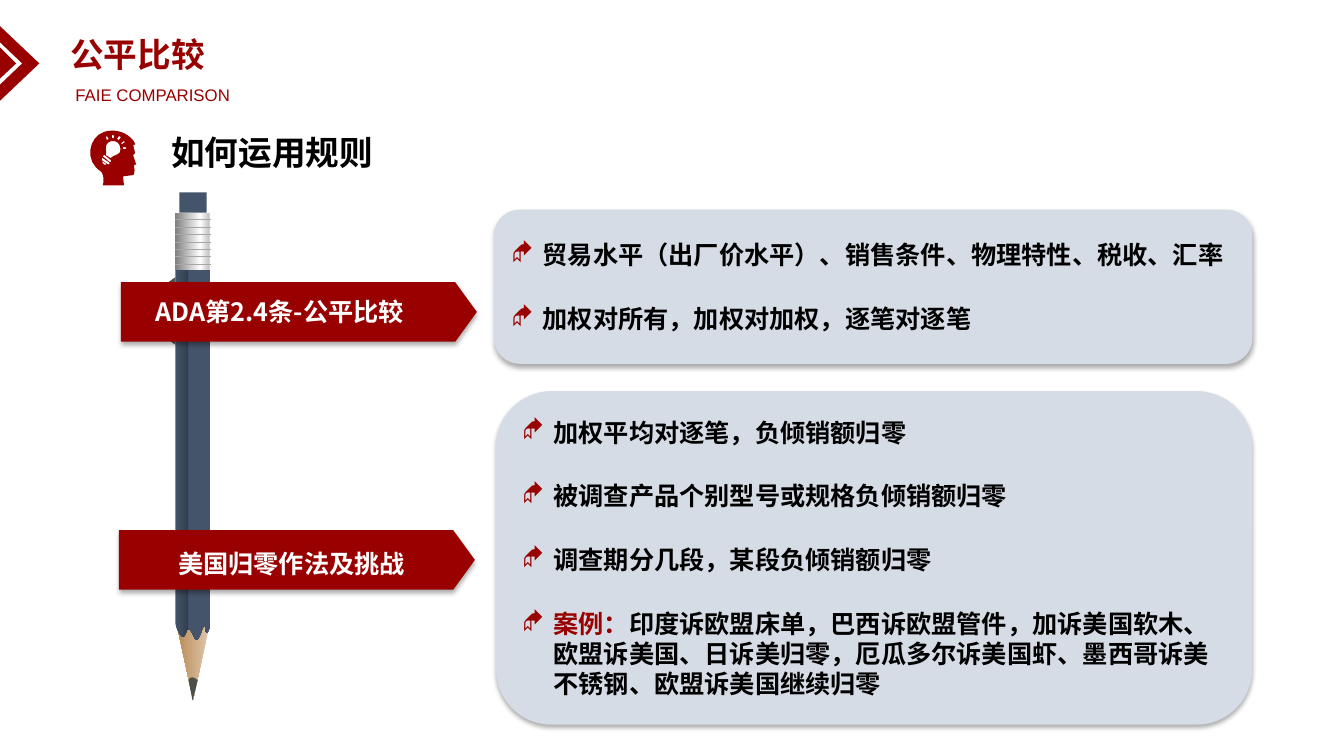
from dataclasses import dataclass

from lxml import etree
from pptx import Presentation
from pptx.dml.color import RGBColor
from pptx.enum import shapes, text
from pptx.oxml import ns
from pptx.util import Pt

PX = 9144  # 100 px to the inch


@dataclass(frozen=True)
class Theme:
    red: str = "990000"
    panel: str = "D6DCE5"
    slate: str = "44546A"
    shade: str = "333F50"
    fold: str = "525252"
    lead: str = "4C504C"
    ring: str = "A6A6A6"
    black: str = "000000"
    white: str = "FFFFFF"
    wood: tuple = ((0, "E1C9AF"), (100, "B88954"))
    metal: tuple = ((0, "BFBFBF"), (27, "FFFFFF"), (100, "808080"))
    cjk: str = "Noto Sans CJK SC"
    latin: str = "Arial"
    title_font: str = "Calibri"
    title: int = 24
    body: int = 18
    caption: int = 12


T = Theme()
MSO = shapes.MSO_SHAPE
HEAD = [
    [(102, 160), (101, 161, 102, 162, 103, 163), (104, 164, 105, 163, 106, 163)],
    [(116, 141), (112, 139, 108, 140, 106, 143), (104, 147, 106, 150, 105, 154),
     (110, 157), (112, 154, 117, 154, 119, 151), (120, 147, 119, 143, 116, 141)],
    [(110, 159), (104, 154), (103, 154, 103, 154, 102, 155),
     (102, 155, 102, 156, 103, 156), (109, 161), (109, 161, 110, 161, 110, 160)],
    [(118, 139), (120, 136), (118, 135), (116, 138)],
    [(121, 143), (124, 141), (123, 140), (120, 142)],
    [(113, 137), (113, 134), (111, 134), (111, 137)],
    [(108, 138), (106, 135), (105, 136), (106, 139)],
    [(122, 148), (125, 148), (125, 146), (122, 146)],
    [(108, 161), (102, 157), (102, 156, 101, 157, 101, 157),
     (101, 158, 101, 158, 101, 159), (107, 163), (108, 163, 108, 163, 108, 163),
     (109, 162, 109, 162, 108, 161)],
    [(102, 184), (103, 180, 103, 175, 101, 171), (83, 160, 88, 136, 103, 131),
     (112, 128, 123, 130, 130, 137), (136, 143, 133, 144, 133, 144), (132, 144),
     (133, 147, 134, 152, 134, 152), (133, 153, 132, 154, 132, 154), (135, 163),
     (133, 164), (133, 167, 134, 169, 133, 172), (133, 173, 132, 174, 130, 174),
     (122, 175), (123, 184)],
]
BARREL = [[(174, 268), (209, 268), (209, 616), (208, 623, 207, 626, 205, 628),
           (203, 625, 204, 619, 202, 621), (201, 622, 198, 634, 195, 635),
           (193, 635, 190, 624, 187, 624), (185, 623, 184, 633, 181, 632),
           (178, 630, 175, 624, 174, 619)]]
LEAD = [[(191, 672), (194, 673, 195, 674, 196, 675), (191, 695), (187, 675),
         (187, 674, 189, 672, 191, 672)]]
CHEVRONS = [[[(0, 47), (16, 63), (0, 78)]],
            [[(0, 26), (39, 63), (0, 100), (0, 84), (22, 63), (0, 42)]]]
RULES = ["贸易水平（出厂价水平）、销售条件、物理特性、税收、汇率",
         "加权对所有，加权对加权，逐笔对逐笔"]
ZEROING = ["加权平均对逐笔，负倾销额归零",
           "被调查产品个别型号或规格负倾销额归零",
           "调查期分几段，某段负倾销额归零",
           ("案例：", "印度诉欧盟床单，巴西诉欧盟管件，加诉美国软木、欧盟诉美国、日诉美归零，"
            "厄瓜多尔诉美国虾、墨西哥诉美不锈钢、欧盟诉美国继续归零")]


def child(parent, tag, **attrs):
    return etree.SubElement(parent, ns.qn(tag), {k: str(v) for k, v in attrs.items()})


def paint(sp, fill, angle=0):
    """Fill with one colour, or with a gradient given as (percent, colour) stops."""
    sp.shadow.inherit = False
    sp.line.fill.background()
    if isinstance(fill, str):
        sp.fill.solid()
        sp.fill.fore_color.rgb = RGBColor.from_string(fill)
        return
    sp.fill.gradient()
    grad = sp._element.spPr.find(ns.qn("a:gradFill"))
    grad.find(ns.qn("a:lin")).set("ang", str(angle * 60000))
    stops = grad.find(ns.qn("a:gsLst"))
    for stop in list(stops):
        stops.remove(stop)
    for percent, colour in fill:
        child(child(stops, "a:gs", pos=percent * 1000), "a:srgbClr", val=colour)


def cast_shadow(sp):
    effects = sp._element.spPr.find(ns.qn("a:effectLst"))
    outer = child(effects, "a:outerShdw", blurRad=Pt(3.5), dist=Pt(2.2),
                  dir=90 * 60000, algn="t", rotWithShape=0)
    child(child(outer, "a:srgbClr", val=T.black), "a:alpha", val=32000)


def preset(slide, kind, box, fill, angle=0, adj=None, rot=0):
    sp = slide.shapes.add_shape(kind, *(v * PX for v in box))
    if adj is not None:
        sp.adjustments[0] = adj
    sp.rotation = rot
    paint(sp, fill, angle)
    return sp


def flatten(contour, steps=8):
    """Turn points and (control, control, end) Bezier segments into EMU points."""
    points = [contour[0]]
    for seg in contour[1:]:
        if len(seg) == 2:
            points.append(seg)
            continue
        knots = [points[-1], seg[:2], seg[2:4], seg[4:]]
        for i in range(1, steps + 1):
            t = i / steps
            weights = ((1 - t) ** 3, 3 * t * (1 - t) ** 2, 3 * t * t * (1 - t), t ** 3)
            points.append(tuple(sum(w * k[axis] for w, k in zip(weights, knots))
                                for axis in (0, 1)))
    return [(round(x * PX), round(y * PX)) for x, y in points]


def outline(slide, contours, fill):
    first, *rest = [flatten(c) for c in contours]
    builder = slide.shapes.build_freeform(*first[0])
    builder.add_line_segments(first[1:], close=True)
    for points in rest:
        builder.move_to(*points[0])
        builder.add_line_segments(points[1:], close=True)
    paint(builder.convert_to_shape(), fill)


def style(r, size, colour, bold=True, font=T.cjk):
    r.font.size, r.font.bold, r.font.name = Pt(size), bold, font
    r.font.color.rgb = RGBColor.from_string(colour)
    child(r._r.get_or_add_rPr(), "a:ea", typeface=T.cjk)


def write(sp, words, size, colour, spacing=1.0, centred=False, **look):
    p = sp.text_frame.paragraphs[0]
    p.text = words
    p.line_spacing = spacing
    p.alignment = text.PP_ALIGN.CENTER if centred else text.PP_ALIGN.LEFT
    style(p.runs[0], size, colour, **look)
    return p


def label(slide, box, *args, wrap=True, **look):
    sp = slide.shapes.add_textbox(*(v * PX for v in box))
    sp.text_frame.word_wrap = wrap
    return write(sp, *args, **look)


def panel(slide, box, items):
    """Rounded panel of bullets; an item in two parts has a red lead-in."""
    sp = preset(slide, MSO.ROUNDED_RECTANGLE, box, T.panel)
    cast_shadow(sp)
    tf = sp.text_frame
    tf.vertical_anchor = text.MSO_ANCHOR.MIDDLE
    for i, item in enumerate(items):
        p = tf.add_paragraph() if i else tf.paragraphs[0]
        p.alignment = text.PP_ALIGN.LEFT
        p.space_before = p.space_after = Pt(12)
        pPr = p._p.get_or_add_pPr()
        pPr.set("marL", str(31 * PX))
        pPr.set("indent", str(-31 * PX))
        child(child(pPr, "a:buClr"), "a:srgbClr", val=T.red)
        child(pPr, "a:buFont", typeface="Wingdings")
        child(pPr, "a:buChar", char="◆")
        parts = [(item, T.black)] if isinstance(item, str) else zip(item, (T.red, T.black))
        for words, colour in parts:
            r = p.add_run()
            r.text = words
            style(r, T.body, colour)


def flag(slide, left, top):
    sp = preset(slide, MSO.PENTAGON, (left, top, 353, 59), T.red, adj=0.363)
    cast_shadow(sp)
    sp.text_frame.vertical_anchor = text.MSO_ANCHOR.MIDDLE
    return sp


def pencil(slide):
    preset(slide, MSO.PENTAGON, (152, 638, 79, 34), T.wood, angle=90, adj=2.32, rot=90)
    outline(slide, BARREL, ((0, T.slate), (34, T.shade), (38, T.slate), (100, T.slate)))
    preset(slide, MSO.RECTANGLE, (174, 211, 34, 57), T.metal, angle=180)
    preset(slide, MSO.RECTANGLE, (178, 191, 27, 20), T.slate)
    outline(slide, LEAD, T.lead)
    for i in range(7):
        y = round((218 + i * 22 / 3) * PX)
        ring = slide.shapes.add_connector(shapes.MSO_CONNECTOR.STRAIGHT,
                                          174 * PX, y, 209 * PX, y)
        ring.line.color.rgb = RGBColor.from_string(T.ring)
        ring.line.width = Pt(0.5)
        child(ring._element.spPr, "a:effectLst")


def main():
    prs = Presentation()
    prs.slide_width, prs.slide_height = 1333 * PX, 750 * PX
    slide = prs.slides.add_slide(prs.slide_layouts[6])

    for chevron in CHEVRONS:
        outline(slide, chevron, T.red)
    label(slide, (60, 33, 390, 48), "公平比较", T.title, T.red,
          spacing=0.9, font=T.title_font)
    label(slide, (65, 81, 180, 28), "FAIE COMPARISON", T.caption, T.red, wrap=False,
          spacing=0.9, bold=False, font=T.latin).space_before = Pt(10)
    outline(slide, HEAD, T.red)
    label(slide, (160, 126, 222, 50), "如何运用规则", T.title, T.black, wrap=False)

    panel(slide, (492, 388, 750, 331), ZEROING)
    panel(slide, (490, 208, 752, 153), RULES)
    pencil(slide)
    preset(slide, MSO.TRAPEZOID, (137, 305, 67, 7), T.fold, adj=0.698, rot=270)
    flag(slide, 120, 280)
    p = label(slide, (19, 283, 467, 43), "ADA第2.4条-公平比较", T.body, T.white,
              spacing=1.2, centred=True)
    p._p.get_or_add_pPr().set("marL", str(50 * PX))
    write(flag(slide, 118, 526), "美国归零作法及挑战", T.body, T.white,
          spacing=1.2, centred=True, font=T.latin)
    prs.save("out.pptx")


if __name__ == "__main__":
    main()
